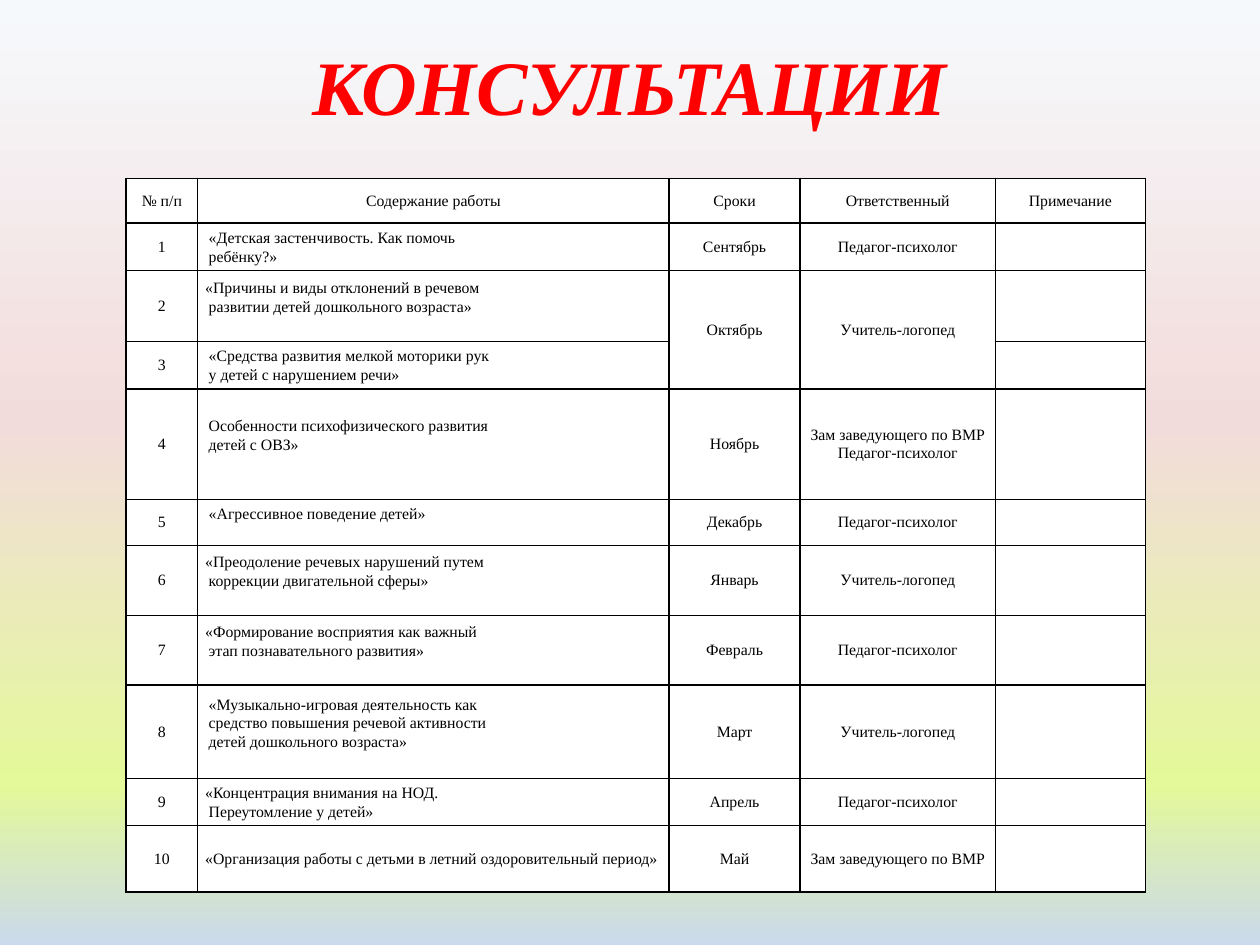
from dataclasses import dataclass

from lxml.etree import SubElement
from pptx import Presentation
from pptx.dml.color import RGBColor
from pptx.enum.text import MSO_ANCHOR as Anchor, MSO_AUTO_SIZE as Auto, PP_ALIGN as Align
from pptx.oxml.ns import qn
from pptx.util import Pt


@dataclass(frozen=True)
class Theme:
    """Colours, font and type sizes of the slide."""
    font: str = "Times New Roman"
    title: str = "FF0000"
    ink: str = "000000"
    paper: str = "FFFFFF"
    title_size: float = 44
    cell_size: float = 9
    border: float = 1
    sky: tuple = ((0, "F6F9FC"), (45, "F2DCDB"), (83, "E4F999"), (100, "CAD9EB"))


THEME = Theme()
TITLE_BOX = (18, 23.8, 684, 55.4)
TABLE_AT = (72, 102)
COL_WIDTHS = (41, 269.3, 74.9, 111.6, 85.7)
ROW_HEIGHTS = (25.4, 27.2, 40.6, 27.2, 63.1, 26.3, 39.9, 39.9, 53.4, 27, 37.8)
CELL_MARGIN = 4.3
HANGING = 2
LINE_SPACING = 1.07
RAISED = 10.4
PSYCHOLOGIST = "Педагог-психолог"
THERAPIST = "Учитель-логопед"
DEPUTY = "Зам заведующего по ВМР"
HEADERS = ("№ п/п", "Содержание работы", "Сроки", "Ответственный", "Примечание")
TOPICS = (
    ("«Детская застенчивость. Как помочь\nребёнку?»", "Сентябрь", PSYCHOLOGIST),
    ("«Причины и виды отклонений в речевом\nразвитии детей дошкольного возраста»",
     "Октябрь", THERAPIST),
    ("«Средства развития мелкой моторики рук\nу детей с нарушением речи»", "", ""),
    ("Особенности психофизического развития\nдетей с ОВЗ»", "Ноябрь",
     f"{DEPUTY}\n{PSYCHOLOGIST}"),
    ("«Агрессивное поведение детей»", "Декабрь", PSYCHOLOGIST),
    ("«Преодоление речевых нарушений путем\nкоррекции двигательной сферы»",
     "Январь", THERAPIST),
    ("«Формирование восприятия как важный\nэтап познавательного развития»",
     "Февраль", PSYCHOLOGIST),
    ("«Музыкально-игровая деятельность как\nсредство повышения речевой активности\n"
     "детей дошкольного возраста»", "Март", THERAPIST),
    ("«Концентрация внимания на НОД.\nПереутомление у детей»", "Апрель", PSYCHOLOGIST),
    ("«Организация работы с детьми в летний оздоровительный период»", "Май", DEPUTY),
)
FLUSH_ROWS = {2, 6, 7, 9, 10}
RAISED_ROWS = {2, 4, 5, 6, 7, 8}


def set_attrs(obj, values):
    """Set each named attribute of an object."""
    for name, value in values.items():
        setattr(obj, name, value)


def style_run(r, size, color, **values):
    """Format a run in the theme font."""
    set_attrs(r.font, {"name": THEME.font, "size": Pt(size), **values})
    r.font.color.rgb = RGBColor.from_string(color)


def paint_background(s):
    """Give the slide a vertical gradient with the theme's stops."""
    fill = s.background.fill
    fill.gradient()
    fill.gradient_angle = 270
    stops = s.element.find(".//" + qn("a:gsLst"))
    stops.clear()
    for position, color in THEME.sky:
        stop = SubElement(stops, qn("a:gs"), pos=str(position * 1000))
        SubElement(stop, qn("a:srgbClr"), val=color)


def add_title(s, text):
    """Fill and place the title placeholder."""
    sp = s.shapes.title
    set_attrs(sp, dict(zip(("left", "top", "width", "height"), map(Pt, TITLE_BOX))))
    tf = sp.text_frame
    set_attrs(tf, {"vertical_anchor": Anchor.MIDDLE, "word_wrap": True,
                   "auto_size": Auto.SHAPE_TO_FIT_TEXT})
    p = tf.paragraphs[0]
    set_attrs(p, {"alignment": Align.CENTER, "line_spacing": 0.9})
    r = p.add_run()
    r.text = text
    style_run(r, THEME.title_size, THEME.title, bold=True, italic=True)


def draw_borders(cell):
    """Draw a thin line on all four sides of a cell."""
    props = cell._tc.get_or_add_tcPr()
    for side in ("a:lnL", "a:lnR", "a:lnT", "a:lnB"):
        line = SubElement(props, qn(side), w=str(Pt(THEME.border)))
        fill = SubElement(line, qn("a:solidFill"))
        SubElement(fill, qn("a:srgbClr"), val=THEME.ink)


def write_cell(cell, text, is_topic, row):
    """Write the lines of a cell, as a justified topic or centred."""
    for i, line in enumerate(text.split("\n") if text else ()):
        tf = cell.text_frame
        p = tf.paragraphs[0] if i == 0 else tf.add_paragraph()
        p.alignment = Align.JUSTIFY if is_topic else Align.CENTER
        if is_topic:
            p.line_spacing = LINE_SPACING
            indent = 0 if i == 0 and row in FLUSH_ROWS else HANGING
            p._p.get_or_add_pPr().set("marL", str(Pt(indent)))
        r = p.add_run()
        r.text = line
        style_run(r, THEME.cell_size, THEME.ink)


def format_cell(cell, bottom):
    """Set the margins, borders and fill of a cell."""
    set_attrs(cell, {"vertical_anchor": Anchor.MIDDLE, "margin_left": Pt(CELL_MARGIN),
                     "margin_right": Pt(CELL_MARGIN), "margin_top": 0,
                     "margin_bottom": Pt(bottom)})
    draw_borders(cell)
    cell.fill.solid()
    cell.fill.fore_color.rgb = RGBColor.from_string(THEME.paper)


def add_schedule(s):
    """Add the table of consultations."""
    rows = [HEADERS] + [(str(n), *topic, "") for n, topic in enumerate(TOPICS, 1)]
    size = (sum(COL_WIDTHS), sum(ROW_HEIGHTS))
    frame = s.shapes.add_table(len(rows), len(HEADERS), *map(Pt, TABLE_AT + size))
    table = frame.table
    set_attrs(table, {"first_row": False, "horz_banding": False})
    for column, width in zip(table.columns, COL_WIDTHS):
        column.width = Pt(width)
    for i, (height, texts) in enumerate(zip(ROW_HEIGHTS, rows)):
        table.rows[i].height = Pt(height)
        for j, text in enumerate(texts):
            is_topic = i > 0 and j == 1
            cell = table.cell(i, j)
            format_cell(cell, RAISED if is_topic and i in RAISED_ROWS else 0)
            write_cell(cell, text, is_topic, i)
    for j in (2, 3):
        table.cell(2, j).merge(table.cell(3, j))


def main():
    """Build and save the slide."""
    prs = Presentation()
    set_attrs(prs, {"slide_width": Pt(720), "slide_height": Pt(540)})
    s = prs.slides.add_slide(prs.slide_layouts[5])
    paint_background(s)
    add_title(s, "КОНСУЛЬТАЦИИ")
    add_schedule(s)
    prs.save("out.pptx")


if __name__ == "__main__":
    main()
